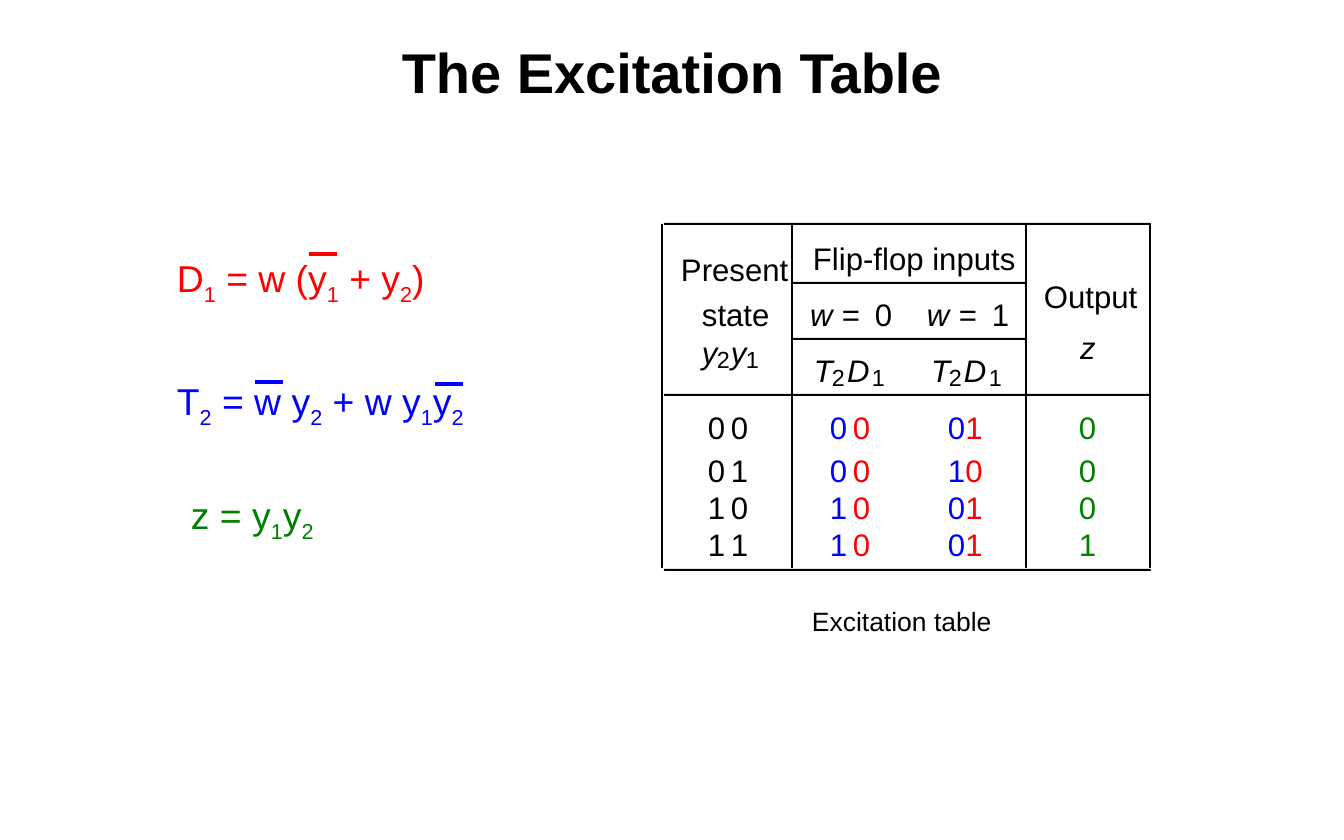
from pptx import Presentation
from pptx.dml.color import RGBColor
from pptx.enum.shapes import MSO_CONNECTOR, MSO_SHAPE
from pptx.enum.text import MSO_ANCHOR, MSO_AUTO_SIZE, PP_ALIGN
from pptx.util import Emu, Pt
from lxml import etree

RECTANGLE = MSO_SHAPE.RECTANGLE
STRAIGHT = MSO_CONNECTOR.STRAIGHT
MIDDLE = MSO_ANCHOR.MIDDLE
GROW = MSO_AUTO_SIZE.SHAPE_TO_FIT_TEXT
CENTER = PP_ALIGN.CENTER
EFFECTS = "{http://schemas.openxmlformats.org/drawingml/2006/main}effectLst"
BLACK, RED, BLUE, GREEN = "000000", "FF0000", "0000FF", "008000"

presentation = Presentation()


def px(*lengths):
    return [Emu(round(length * 914400 / 112)) for length in lengths]


def add_text(box, runs, size, inset=0, italic=False, bold=False):
    shape = slide.shapes.add_textbox(*px(*box))
    frame = shape.text_frame
    frame.word_wrap = False
    frame.auto_size = GROW
    frame.margin_left = frame.margin_right = px(inset)[0]
    frame.margin_top = frame.margin_bottom = px(inset / 2)[0]
    for text, color, baseline in runs:
        run = frame.paragraphs[0].add_run()
        run.text = text
        run.font.name = "Arial"
        run.font.size = Pt(size)
        run.font.bold = bold
        run.font.italic = italic
        run.font.color.rgb = RGBColor.from_string(color)
        if baseline:
            run.font._element.set("baseline", str(baseline))
    return frame


presentation.slide_width, presentation.slide_height = px(1344, 840)
slide = presentation.slides.add_slide(presentation.slide_layouts[6])

title = add_text((112, 27, 1120, 96), [("The Excitation Table", BLACK, 0)], 36, 11, bold=True)
title.auto_size = MSO_AUTO_SIZE.NONE
title.word_wrap = True
title.vertical_anchor = MIDDLE
title.paragraphs[0].alignment = CENTER
title.paragraphs[0].line_spacing = 0.9

add_text((812, 605, 189, 32), [("Excitation table", BLACK, 0)], 17)

rules = [(664, top, 486, 1) for top in (223, 394, 569)]
rules += [(791, top, 235, 1) for top in (282, 338)]
row_edges = [224, 280, 337, 395, 451, 489, 524, 567]
for left in (661, 791, 1025, 1149):
    for top, bottom in zip(row_edges, row_edges[1:]):
        rules.append((left, top, 1, bottom - top))
for rule in rules:
    shape = slide.shapes.add_shape(RECTANGLE, *px(*rule))
    shape.shadow.inherit = False
    shape.fill.solid()
    shape.fill.fore_color.rgb = RGBColor.from_string(BLACK)
    shape.line.color.rgb = RGBColor.from_string(BLACK)
    shape.line.width = Pt(0.5)

headings = [
    ("Present", 681, 250, 116), ("state", 702, 295, 76),
    ("Flip-flop inputs", 813, 239, 204), ("Output", 1044, 277, 94),
]
for text, left, top, width in headings:
    add_text((left, top, width, 38), [(text, BLACK, 0)], 20)

variables = [("y", 702, 333, 25), ("y", 731, 333, 25), ("z", 1080, 328, 25)]
subscripts = [("2", 717, 345), ("1", 746, 345)]
for offset, value in ((0, "0"), (117, "1")):
    variables += [
        ("w", 810 + offset, 295, 31),
        ("T", 814 + offset, 351, 28),
        ("D", 847 + offset, 351, 31),
    ]
    subscripts += [("2", 832 + offset, 363), ("1", 872 + offset, 363)]
    add_text((842 + offset, 295, 27, 38), [("=", BLACK, 0)], 20)
    add_text((875 + offset, 295, 26, 38), [(value, BLACK, 0)], 20)
for text, left, top, width in variables:
    add_text((left, top, width, 38), [(text, BLACK, 0)], 20, italic=True)
for text, left, top in subscripts:
    add_text((left, top, 20, 28), [(text, BLACK, 0)], 15)

columns = [(708, BLACK), (731, BLACK), (830, BLUE), (853, RED), (1079, GREEN)]
states = [
    (408, "00000", "01"), (451, "01000", "10"),
    (488, "10100", "01"), (525, "11101", "01"),
]
for top, digits, (toggle, data) in states:
    for (left, color), digit in zip(columns, digits):
        add_text((left, top, 26, 38), [(digit, color, 0)], 20)
    add_text((948, top, 35, 38), [(toggle, BLUE, 0), (data, RED, 0)], 20)

equations = [
    ((166, 250, 289, 57), RED, ["D", "1", " = w (y", "1", " + y", "2", ")"]),
    ((166, 373, 319, 57), BLUE, ["T", "2", " = w y", "2", " + w y", "1", "y", "2"]),
    ((180, 487, 150, 57), GREEN, ["z = y", "1", "y", "2"]),
]
for box, color, parts in equations:
    runs = [(part, color, -25000 * (index % 2)) for index, part in enumerate(parts)]
    add_text(box, runs, 24, 11)

for left, top, color in ((309, 254, RED), (255, 382, BLUE), (435, 384, BLUE)):
    overbar = slide.shapes.add_connector(STRAIGHT, *px(left, top, left + 28, top))
    overbar.line.color.rgb = RGBColor.from_string(color)
    overbar.line.width = Pt(2.25)
    etree.SubElement(overbar._element.spPr, EFFECTS)

presentation.save("out.pptx")
